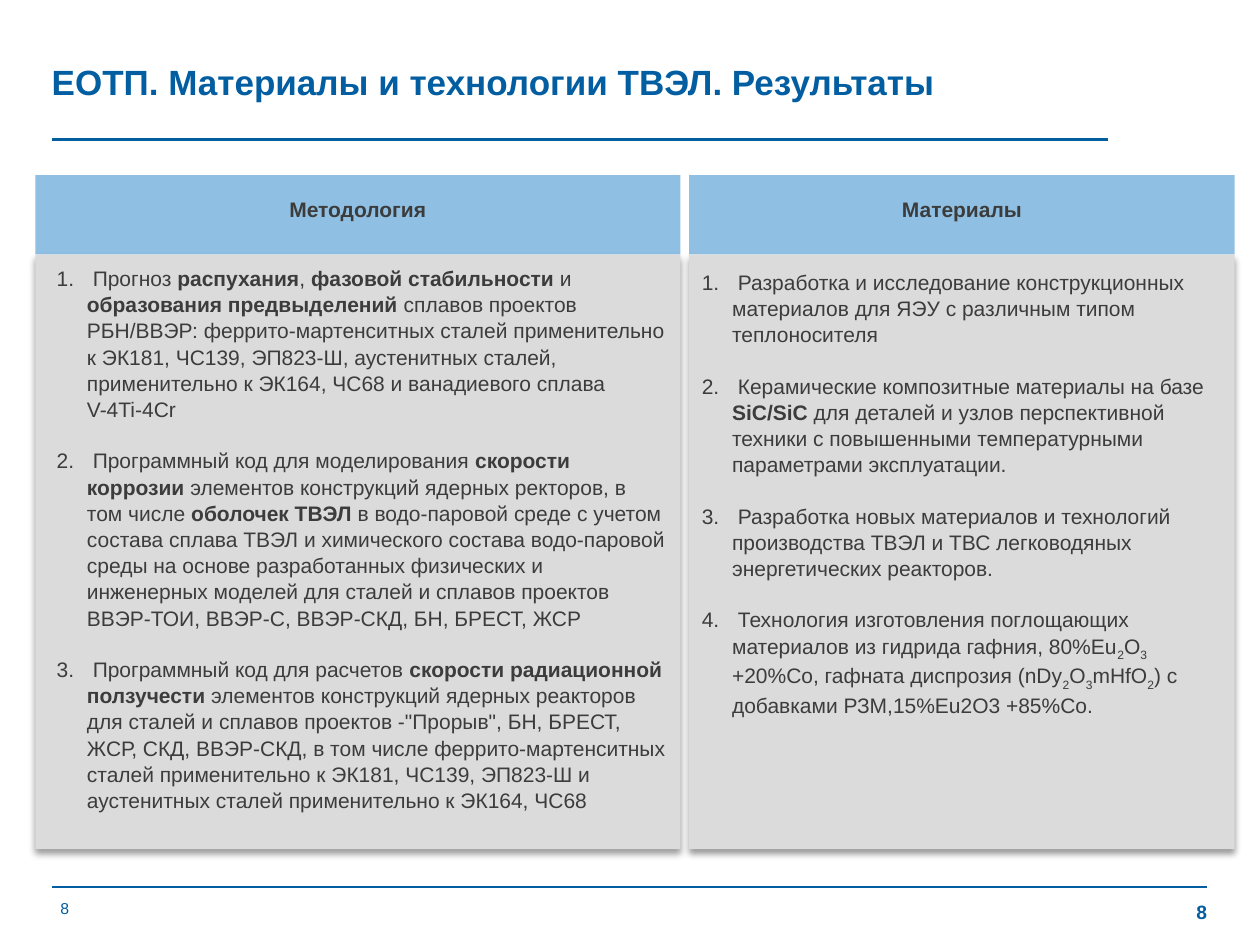
from dataclasses import dataclass

from lxml.etree import SubElement
from pptx import Presentation
from pptx.dml.color import RGBColor
from pptx.enum.shapes import MSO_CONNECTOR as Connector
from pptx.enum.shapes import MSO_SHAPE as ShapeKind
from pptx.enum.text import MSO_ANCHOR as Anchor
from pptx.enum.text import MSO_AUTO_SIZE as AutoSize
from pptx.enum.text import PP_ALIGN as Align
from pptx.oxml.ns import qn
from pptx.shapes.autoshape import Shape
from pptx.slide import Slide
from pptx.text.text import TextFrame
from pptx.util import Inches, Pt


@dataclass(frozen=True)
class Theme:
    font: str = "Arial"
    accent: RGBColor = RGBColor(0x02, 0x5E, 0xA1)
    text: RGBColor = RGBColor(0x3C, 0x3C, 0x3C)
    header: RGBColor = RGBColor(0x8F, 0xC0, 0xE3)
    panel: RGBColor = RGBColor(0xDB, 0xDB, 0xDB)
    title_size: float = 20
    body_size: float = 12
    number_size: float = 11
    footer_size: float = 9


@dataclass(frozen=True)
class Box:
    left: float
    top: float
    width: float
    height: float


@dataclass(frozen=True)
class Column:
    left: float
    width: float
    heading: str
    body: Box
    items: tuple[str, ...]


THEME = Theme()
HEADER_TOP, HEADER_HEIGHT, PANEL_HEIGHT = 1.39, 0.63, 4.72
LIST_INDENT = 0.24

# In list items *...* marks bold text and _..._ marks a subscript.
COLUMNS = (
    Column(0.28, 5.12, "Методология", Box(0.35, 2.05, 5.04, 4.14), (
        " Прогноз *распухания*, *фазовой стабильности* и *образования предвыделений* "
        "сплавов проектов РБН/ВВЭР: феррито-мартенситных сталей применительно к ЭК181, "
        "ЧС139, ЭП823-Ш, аустенитных сталей, применительно к ЭК164, ЧС68 и ванадиевого "
        "сплава V-4Ti-4Cr",
        " Программный код для моделирования *скорости коррозии* элементов конструкций "
        "ядерных ректоров, в том числе *оболочек ТВЭЛ* в водо-паровой среде с учетом "
        "состава сплава ТВЭЛ и химического состава водо-паровой среды на основе "
        "разработанных физических и инженерных моделей для сталей и сплавов проектов "
        "ВВЭР-ТОИ, ВВЭР-С, ВВЭР-СКД, БН, БРЕСТ, ЖСР",
        " Программный код для расчетов *скорости радиационной ползучести* элементов "
        "конструкций ядерных реакторов для сталей и сплавов проектов -\"Прорыв\", БН, "
        "БРЕСТ, ЖСР, СКД, ВВЭР-СКД, в том числе феррито-мартенситных сталей применительно "
        "к ЭК181, ЧС139, ЭП823-Ш и аустенитных сталей применительно к ЭК164, ЧС68",
    )),
    Column(5.47, 4.33, "Материалы", Box(5.47, 2.08, 4.31, 3.53), (
        " Разработка и исследование конструкционных материалов для ЯЭУ с различным типом "
        "теплоносителя",
        " Керамические композитные материалы на базе *SiC/SiC* для деталей и узлов "
        "перспективной техники с повышенными температурными параметрами эксплуатации.",
        " Разработка новых материалов и технологий производства ТВЭЛ и ТВС легководяных "
        "энергетических реакторов.",
        " Технология изготовления поглощающих материалов из гидрида гафния, "
        "80%Eu_2_O_3_ +20%Со, гафната диспрозия (nDy_2_O_3_mHfO_2_) с добавками "
        "РЗМ,15%Eu2O3 +85%Со.",
    )),
)


def place(shape: Shape, box: Box) -> None:
    shape.left, shape.top = Inches(box.left), Inches(box.top)
    shape.width, shape.height = Inches(box.width), Inches(box.height)


def prepare_frame(frame: TextFrame, *, anchor: Anchor = Anchor.TOP, wrap: bool = True,
                  insets: tuple[float, float, float, float] = (0.1, 0.05, 0.1, 0.05)) -> None:
    """Set the anchor, wrapping and left, top, right, bottom insets."""
    frame.auto_size = AutoSize.NONE
    frame.word_wrap = wrap
    frame.vertical_anchor = anchor
    (frame.margin_left, frame.margin_top,
     frame.margin_right, frame.margin_bottom) = map(Inches, insets)


def write(frame: TextFrame, text: str, *, size: float, color: RGBColor, bold: bool = False,
          align: Align = Align.LEFT, spacing: float = 1.0, gap: float = 0,
          numbered: bool = False) -> None:
    """Add a paragraph, turning the * and _ marks into bold and subscript runs."""
    paragraph = frame.paragraphs[0] if not frame.text else frame.add_paragraph()
    paragraph.alignment = align
    paragraph.line_spacing = spacing
    paragraph.space_before = Pt(gap)
    if numbered:
        properties = paragraph._p.get_or_add_pPr()
        properties.set("marL", str(Inches(LIST_INDENT)))
        properties.set("indent", str(-Inches(LIST_INDENT)))
        SubElement(properties, qn("a:buAutoNum"), type="arabicPeriod")
    for part_index, part in enumerate(text.split("*")):
        for piece_index, piece in enumerate(part.split("_")):
            if not piece:
                continue
            run = paragraph.add_run()
            run.text = piece
            font = run.font
            font.name, font.size = THEME.font, Pt(size)
            font.bold = bold or part_index % 2 == 1
            font.color.rgb = color
            if piece_index % 2:
                font._element.set("baseline", "-25000")


def add_label(slide: Slide, box: Box, text: str, *, size: float, color: RGBColor,
              bold: bool = False, align: Align = Align.LEFT, **frame_format) -> None:
    label = slide.shapes.add_textbox(0, 0, 0, 0)
    place(label, box)
    prepare_frame(label.text_frame, **frame_format)
    write(label.text_frame, text, size=size, color=color, bold=bold, align=align)


def add_rule(slide: Slide, right: float, top: float, weight: float) -> None:
    rule = slide.shapes.add_connector(Connector.STRAIGHT, Inches(0.41), Inches(top),
                                      Inches(right), Inches(top))
    rule.line.color.rgb = THEME.accent
    rule.line.width = Pt(weight)
    SubElement(rule._element.spPr, qn("a:effectLst"))


def add_panel(slide: Slide, box: Box, fill: RGBColor, *, shadow: bool = False) -> None:
    panel = slide.shapes.add_shape(ShapeKind.RECTANGLE, 0, 0, 0, 0)
    place(panel, box)
    panel.fill.solid()
    panel.fill.fore_color.rgb = fill
    panel.line.fill.background()
    panel.shadow.inherit = False
    if shadow:
        effects = panel._element.spPr.find(qn("a:effectLst"))
        outer = SubElement(effects, qn("a:outerShdw"), blurRad=str(Pt(4)), dist=str(Pt(3)),
                           dir="5400000", algn="t", rotWithShape="0")
        black = SubElement(outer, qn("a:srgbClr"), val="000000")
        SubElement(black, qn("a:alpha"), val="40000")


def bring_to_front(shape: Shape) -> None:
    shape._element.getparent().append(shape._element)


def add_column(slide: Slide, column: Column, body: Shape) -> None:
    header = Box(column.left, HEADER_TOP, column.width, HEADER_HEIGHT)
    add_panel(slide, header, THEME.header)
    add_panel(slide, Box(column.left, HEADER_TOP + HEADER_HEIGHT, column.width, PANEL_HEIGHT),
              THEME.panel, shadow=True)
    heading_width = 1.3
    heading_left = column.left + (column.width - heading_width) / 2
    add_label(slide, Box(heading_left, 1.51, heading_width, 0.3), column.heading,
              size=THEME.body_size, color=THEME.text, bold=True, align=Align.CENTER, wrap=False)
    place(body, column.body)
    prepare_frame(body.text_frame)
    for index, item in enumerate(column.items):
        write(body.text_frame, item, size=THEME.body_size, color=THEME.text, spacing=1.04,
              gap=14.4 if index else 0, numbered=True)
    bring_to_front(body)


def main() -> None:
    presentation = Presentation()
    presentation.slide_width, presentation.slide_height = Inches(10), Inches(7.5)
    slide = presentation.slides.add_slide(presentation.slide_layouts.get_by_name("Two Content"))
    title, *bodies = slide.placeholders

    place(title, Box(0.41, 0.26, 8.38, 0.8))
    prepare_frame(title.text_frame, anchor=Anchor.MIDDLE, insets=(0, 0.04, 0, 0.04))
    write(title.text_frame, "ЕОТП. Материалы и технологии ТВЭЛ. Результаты",
          size=THEME.title_size, color=THEME.accent, bold=True, spacing=0.96)
    add_rule(slide, right=8.79, top=1.11, weight=1.55)

    for column, body in zip(COLUMNS, bodies):
        add_column(slide, column, body)

    add_rule(slide, right=9.58, top=7.04, weight=0.75)
    add_label(slide, Box(0.41, 7.09, 3.7, 0.23), "8", size=THEME.footer_size,
              color=THEME.accent, anchor=Anchor.MIDDLE, insets=(0.07, 0.04, 0, 0.04))
    add_label(slide, Box(6.52, 7.14, 3.06, 0.2), "8", size=THEME.number_size,
              color=THEME.accent, bold=True, align=Align.RIGHT, anchor=Anchor.MIDDLE,
              insets=(0, 0, 0, 0))
    presentation.save("out.pptx")


if __name__ == "__main__":
    main()
